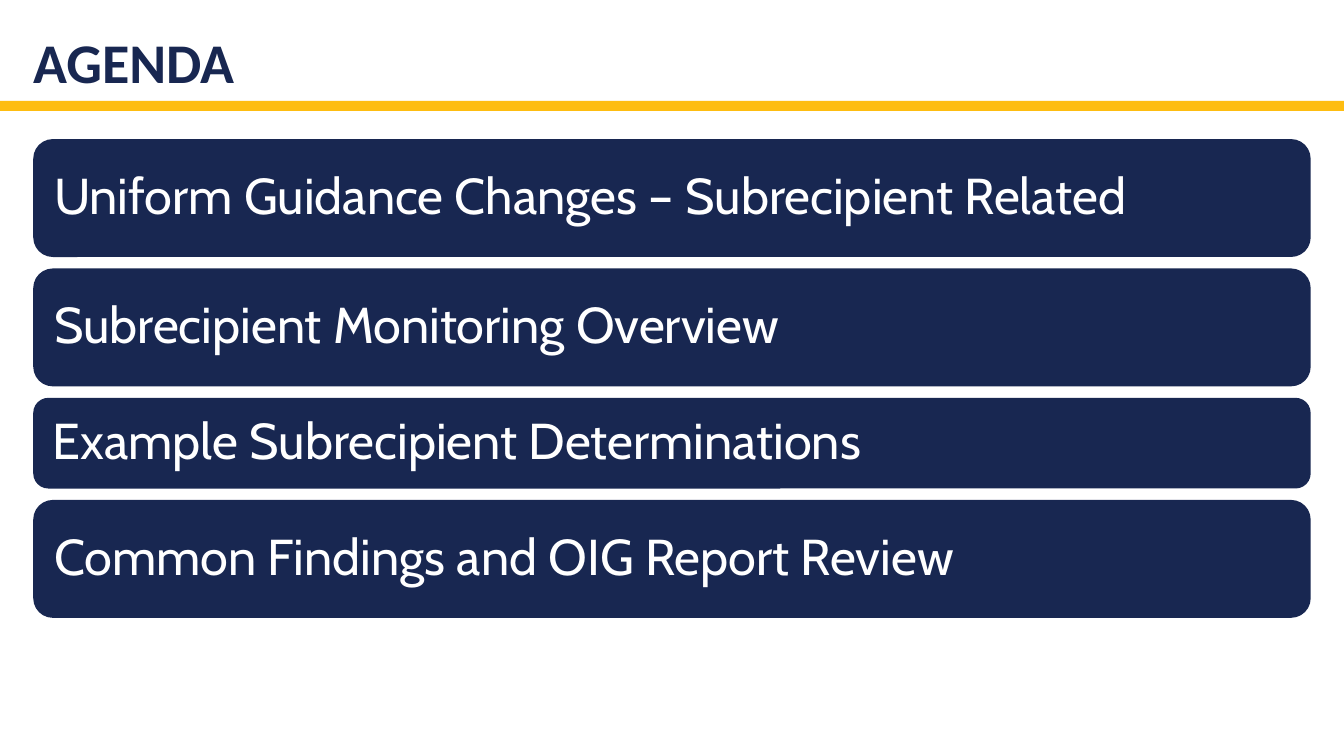
from pptx import Presentation, util as u
from pptx.dml.color import RGBColor
from pptx.enum import shapes, text

COLORS = {"navy": "182751", "gold": "FEBD11", "white": "FFFFFF"}
AGENDA = [
    ("Uniform Guidance Changes – Subrecipient Related", 1.17),
    ("Subrecipient Monitoring Overview", 1.17),
    ("Example Subrecipient Determinations", 0.9),
    ("Common Findings and OIG Report Review", 1.17),
]
WIDTH, HEIGHT = 13.33, 7.5
MARGIN = 0.33
CONTENT_WIDTH = WIDTH - 2 * MARGIN
LIST_TOP, LIST_BOTTOM = 1.38, 6.13


def add_block(kind, left, top, width, height, color):
    shape = slide.shapes.add_shape(
        kind, u.Inches(left), u.Inches(top), u.Inches(width), u.Inches(height))
    shape.shadow.inherit = False
    shape.fill.solid()
    shape.fill.fore_color.rgb = RGBColor.from_string(COLORS[color])
    shape.line.fill.background()
    return shape


def write_line(shape, words, font_name, size, color, bold, anchor, inset_x, inset_y):
    frame = shape.text_frame
    frame.word_wrap = True
    frame.vertical_anchor = anchor
    frame.margin_left = frame.margin_right = u.Inches(inset_x)
    frame.margin_top = frame.margin_bottom = u.Inches(inset_y)
    paragraph = frame.paragraphs[0]
    paragraph.text = words
    paragraph.alignment = text.PP_ALIGN.LEFT
    paragraph.line_spacing = 0.9
    paragraph.font.name = font_name
    paragraph.font.size = u.Pt(size)
    paragraph.font.bold = bold
    paragraph.font.color.rgb = RGBColor.from_string(COLORS[color])


presentation = Presentation()
presentation.slide_width = u.Inches(WIDTH)
presentation.slide_height = u.Inches(HEIGHT)
slide = presentation.slides.add_slide(presentation.slide_layouts[6])

add_block(shapes.MSO_SHAPE.RECTANGLE, 0, 1, WIDTH, 0.1, "gold")

title = slide.shapes.add_textbox(
    u.Inches(MARGIN), 0, u.Inches(CONTENT_WIDTH), u.Inches(1))
write_line(title, "AGENDA", "Calibri", 40, "navy", True,
           text.MSO_ANCHOR.BOTTOM, 0, 0.05)

bar_heights = sum(height for _, height in AGENDA)
gap = (LIST_BOTTOM - LIST_TOP - bar_heights) / (len(AGENDA) - 1)
top = LIST_TOP
for topic, height in AGENDA:
    bar = add_block(shapes.MSO_SHAPE.ROUNDED_RECTANGLE,
                    MARGIN, top, CONTENT_WIDTH, height, "navy")
    write_line(bar, topic, "Cabin", 36, "white", False,
               text.MSO_ANCHOR.MIDDLE, 0.15, 0.15)
    top += height + gap

presentation.save("out.pptx")
